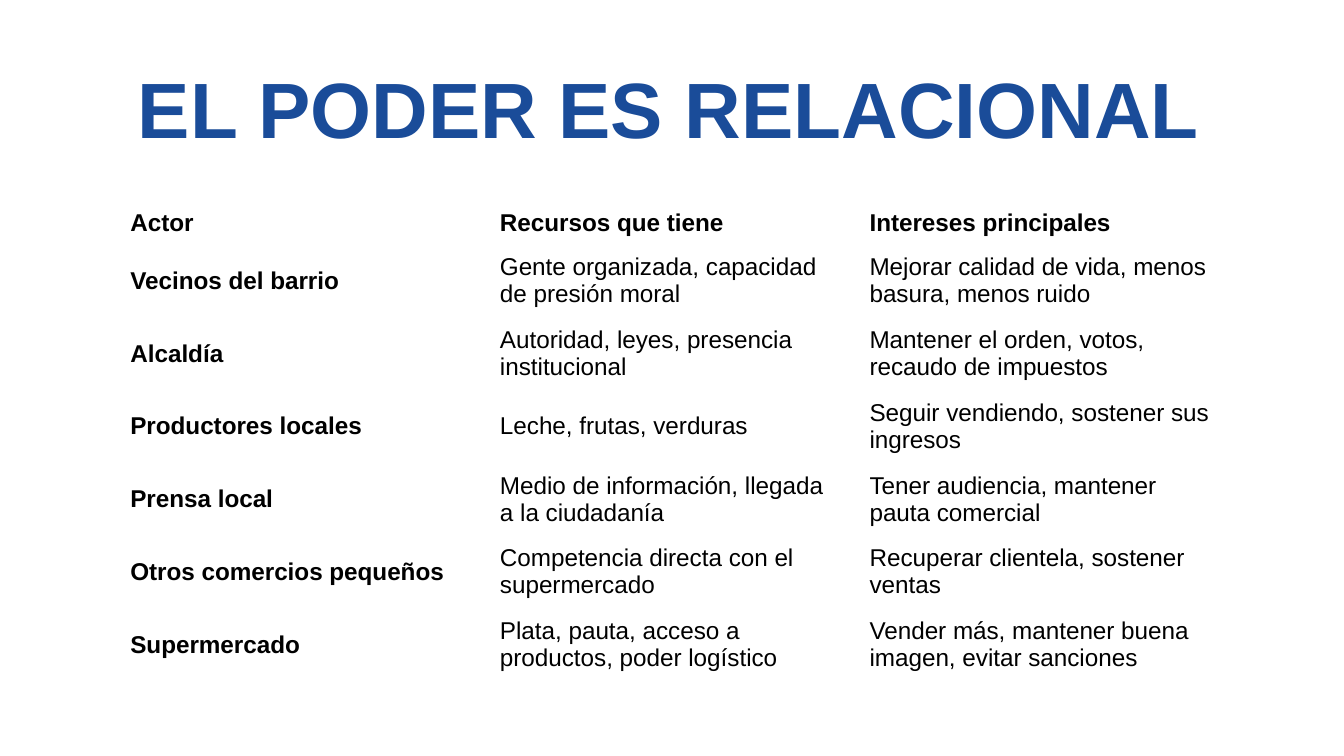
import pptx
import pptx.dml.color
import pptx.enum.text
import pptx.util

Inches = pptx.util.Inches
FONT = "Arial"
COLORS = {"title": "1A4C99", "text": "000000"}
SLIDE_WIDTH = 10
SLIDE_HEIGHT = SLIDE_WIDTH * 9 / 16

HEADER = ("Actor", "Recursos que tiene", "Intereses principales")
ACTORS = [
    ("Vecinos del barrio", "Gente organizada, capacidad de presión moral",
     "Mejorar calidad de vida, menos basura, menos ruido"),
    ("Alcaldía", "Autoridad, leyes, presencia institucional",
     "Mantener el orden, votos, recaudo de impuestos"),
    ("Productores locales", "Leche, frutas, verduras",
     "Seguir vendiendo, sostener sus ingresos"),
    ("Prensa local", "Medio de información, llegada a la ciudadanía",
     "Tener audiencia, mantener pauta comercial"),
    ("Otros comercios pequeños", "Competencia directa con el supermercado",
     "Recuperar clientela, sostener ventas"),
    ("Supermercado", "Plata, pauta, acceso a productos, poder logístico",
     "Vender más, mantener buena imagen, evitar sanciones"),
]


def format_runs(paragraph, size, color, bold):
    for run in paragraph.runs:
        run.font.name = FONT
        run.font.size = pptx.util.Pt(size)
        run.font.bold = bold
        run.font.color.rgb = pptx.dml.color.RGBColor.from_string(COLORS[color])


def add_title(slide, left, top, width, height):
    box = slide.shapes.add_textbox(
        Inches(left), Inches(top), Inches(width), Inches(height))
    text_frame = box.text_frame
    text_frame.word_wrap = True
    text_frame.auto_size = pptx.enum.text.MSO_AUTO_SIZE.NONE
    text_frame.vertical_anchor = pptx.enum.text.MSO_ANCHOR.TOP
    text_frame.margin_top = Inches(0.06)
    text_frame.margin_bottom = 0
    text_frame.text = "EL PODER ES RELACIONAL"
    paragraph = text_frame.paragraphs[0]
    paragraph.alignment = pptx.enum.text.PP_ALIGN.CENTER
    format_runs(paragraph, 42, "title", True)


def add_actor_table(slide, left, top, width, height, header_height=0.32):
    rows = [HEADER] + ACTORS
    table = slide.shapes.add_table(
        len(rows), len(HEADER), Inches(left), Inches(top),
        Inches(width), Inches(height)).table
    table.first_row = False
    table.horz_banding = False

    # Equal columns, and equal rows below the header
    for column in table.columns:
        column.width = Inches(width / len(HEADER))
    body_height = (height - header_height) / len(ACTORS)
    for index, row in enumerate(table.rows):
        row.height = Inches(body_height if index else header_height)

    # The header row and the actor column are bold
    for row_index, texts in enumerate(rows):
        for column_index, text in enumerate(texts):
            cell = table.cell(row_index, column_index)
            cell.fill.background()
            cell.vertical_anchor = pptx.enum.text.MSO_ANCHOR.MIDDLE
            cell.text_frame.text = text
            format_runs(cell.text_frame.paragraphs[0], 13, "text",
                        row_index == 0 or column_index == 0)


def main():
    presentation = pptx.Presentation()
    presentation.slide_width = Inches(SLIDE_WIDTH)
    presentation.slide_height = Inches(SLIDE_HEIGHT)
    slide = presentation.slides.add_slide(presentation.slide_layouts[6])
    add_title(slide, 0.85, 0.39, 8.25, 0.69)
    add_actor_table(slide, 0.87, 1.5, 8.25, 3.57)
    presentation.save("out.pptx")


if __name__ == "__main__":
    main()
